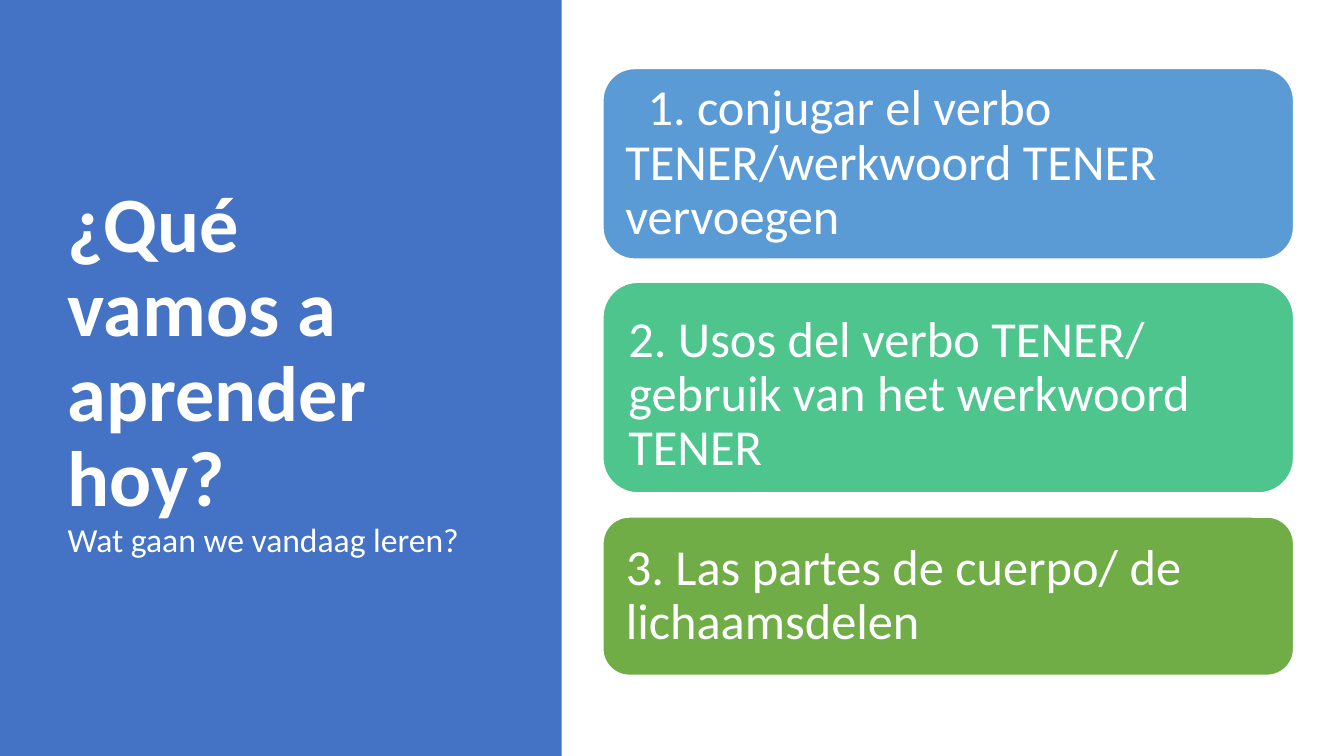
import pptx
import pptx.dml.color
import pptx.enum.shapes
import pptx.enum.text
import pptx.util

Inches = pptx.util.Inches
Pt = pptx.util.Pt
Shape = pptx.enum.shapes.MSO_SHAPE
Align = pptx.enum.text.PP_ALIGN
Anchor = pptx.enum.text.MSO_ANCHOR

WHITE = "FFFFFF"
BLUE = "4472C4"
TITLE = [("¿Qué vamos a aprender hoy?", 56, True),
         ("Wat gaan we vandaag leren?", 24, False)]
# text, fill, top, height, side inset, top inset, first-line indent
CARDS = [
    ("1. conjugar el verbo TENER/werkwoord TENER vervoegen",
     "5B9BD5", 0.68, 1.89, 0.13, 0, 0.22),
    ("2. Usos del verbo TENER/ gebruik van het werkwoord TENER",
     "4DC58D", 2.8, 2.09, 0.15, 0.15, 0),
    ("3. Las partes de cuerpo/ de lichaamsdelen",
     "70AD47", 5.13, 1.57, 0.15, 0, 0),
]
CARD_LEFT, CARD_WIDTH = 5.98, 6.85


def color(code):
    return pptx.dml.color.RGBColor.from_string(code)


def add_box(slide, kind, fill, *place):
    box = slide.shapes.add_shape(kind, *map(Inches, place))
    box.shadow.inherit = False
    box.fill.solid()
    box.fill.fore_color.rgb = color(fill)
    box.line.fill.background()
    return box


def add_run(para, text, size, bold=False):
    run = para.add_run()
    run.text = text
    run.font.name = "Calibri"
    run.font.size = Pt(size)
    run.font.bold = bold
    run.font.color.rgb = color(WHITE)


def set_up(frame):
    """Prepare a left-aligned, vertically centred frame; return its paragraph."""
    frame.word_wrap = True
    frame.auto_size = pptx.enum.text.MSO_AUTO_SIZE.NONE
    frame.vertical_anchor = Anchor.MIDDLE
    para = frame.paragraphs[0]
    para.alignment = Align.LEFT
    para.line_spacing = 0.9
    return para


def add_title(slide):
    title = slide.shapes.title
    title.left, title.top = Inches(0.57), Inches(0.68)
    title.width, title.height = Inches(4.16), Inches(6.02)
    para = set_up(title.text_frame)
    for i, part in enumerate(TITLE):
        if i:
            para.add_line_break()
        add_run(para, *part)


def add_card(slide, text, fill, top, height, side, head, indent):
    card = add_box(slide, Shape.ROUNDED_RECTANGLE, fill,
                   CARD_LEFT, top, CARD_WIDTH, height)
    card.line.color.rgb = color(WHITE)
    card.line.width = Pt(1)
    frame = card.text_frame
    frame.margin_left = frame.margin_right = Inches(side)
    frame.margin_top, frame.margin_bottom = Inches(head), 0
    para = set_up(frame)
    para._p.get_or_add_pPr().set("indent", str(Inches(indent)))
    add_run(para, text, 36)


def main():
    deck = pptx.Presentation()
    deck.slide_width, deck.slide_height = Inches(13.33), Inches(7.5)
    slide = deck.slides.add_slide(deck.slide_layouts[5])
    panel = add_box(slide, Shape.RECTANGLE, BLUE, 0, 0, 5.57, 7.5)
    # Put the panel behind the title
    slide.shapes.title._element.addprevious(panel._element)
    add_title(slide)
    for card in CARDS:
        add_card(slide, *card)
    deck.save("out.pptx")


if __name__ == "__main__":
    main()
